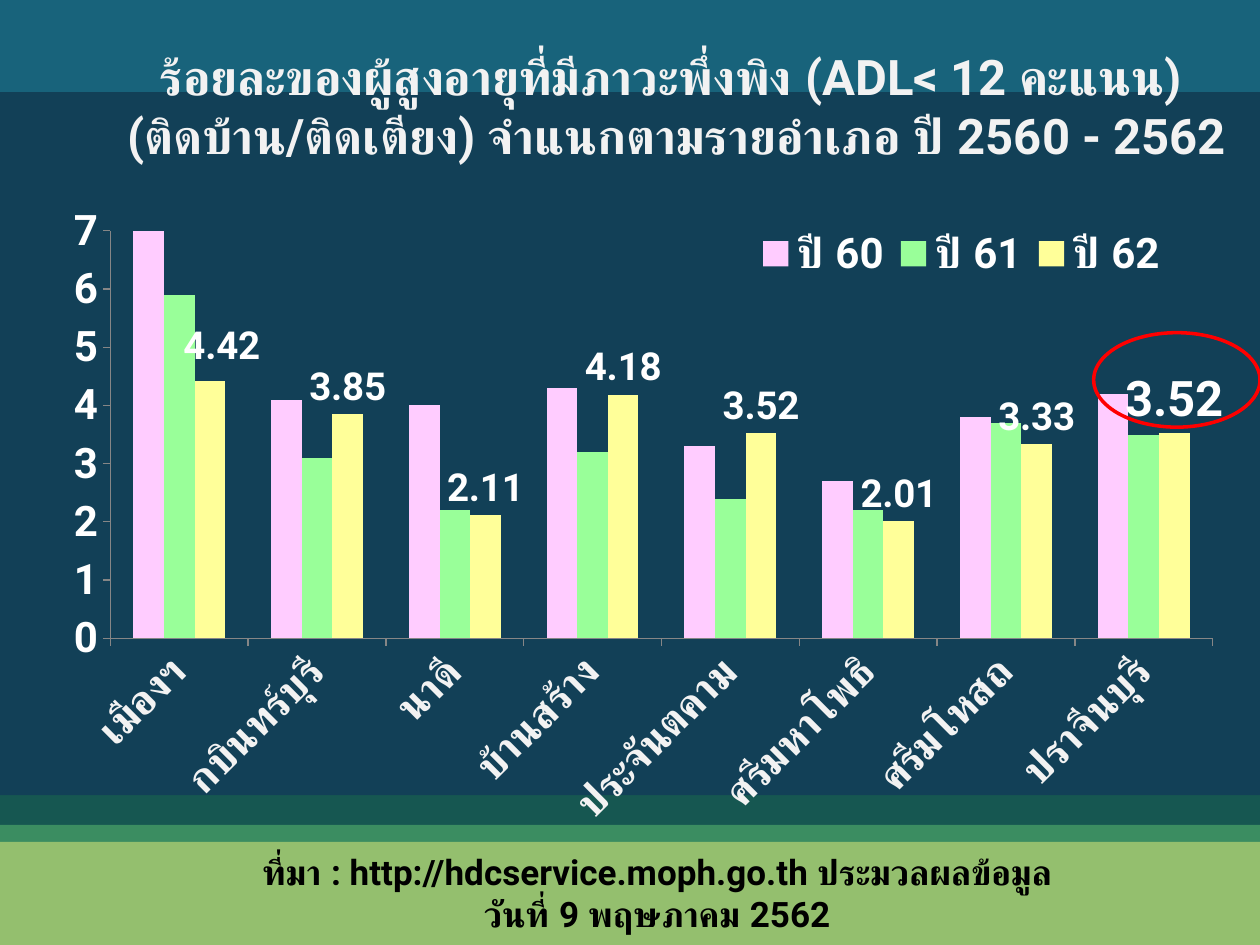
from pptx import Presentation
from pptx.chart.data import CategoryChartData
from pptx.dml.color import RGBColor
from pptx.enum.chart import XL_CHART_TYPE, XL_LABEL_POSITION, XL_LEGEND_POSITION, XL_TICK_MARK
from pptx.enum.shapes import MSO_SHAPE
from pptx.enum.text import MSO_ANCHOR, PP_ALIGN
from pptx.oxml import parse_xml
from pptx.oxml.ns import nsdecls, qn
from pptx.util import Inches, Pt

COLUMN = XL_CHART_TYPE.COLUMN_CLUSTERED
OUTSIDE = XL_LABEL_POSITION.OUTSIDE_END
RIGHT = XL_LEGEND_POSITION.RIGHT
TICK = XL_TICK_MARK.OUTSIDE
NO_TICK = XL_TICK_MARK.NONE
RECT, OVAL = MSO_SHAPE.RECTANGLE, MSO_SHAPE.OVAL
TOP, MIDDLE = MSO_ANCHOR.TOP, MSO_ANCHOR.MIDDLE
CENTER = PP_ALIGN.CENTER

TEAL = RGBColor(0x18, 0x63, 0x7B)
NAVY = RGBColor(0x12, 0x40, 0x57)
PINE = RGBColor(0x16, 0x57, 0x51)
GREEN = RGBColor(0x3B, 0x8D, 0x61)
LIME = RGBColor(0x94, 0xBF, 0x6E)
PINK = RGBColor(0xFF, 0xCC, 0xFF)
MINT = RGBColor(0x99, 0xFF, 0x99)
CREAM = RGBColor(0xFF, 0xFF, 0x99)
RED = RGBColor(0xFF, 0, 0)
GRAY = RGBColor(0x86, 0x86, 0x86)
PALE = RGBColor(0xF2, 0xF2, 0xF2)
WHITE = RGBColor(0xFF, 0xFF, 0xFF)
BLACK = RGBColor(0, 0, 0)

# Bands as (top, height, colour), in percent of the slide
BANDS = [
    (83.5, 4.6, PINE),
    (0, 10.2, TEAL),
    (9.75, 74.4, NAVY),
    (87.3, 2.3, GREEN),
    (89.1, 10.9, LIME),
]
TITLE = [
    "ร้อยละของผู้สูงอายุที่มีภาวะพึ่งพิง (ADL< 12 คะแนน) ",
    "(ติดบ้าน/ติดเตียง) จำแนกตามรายอำเภอ ปี 2560 - 2562",
]
SOURCE = ["ที่มา : http://hdcservice.moph.go.th ประมวลผลข้อมูล วันที่ 9 พฤษภาคม 2562"]
TOWNS = ["เมืองฯ", "กบินทร์บุรี", "นาดี", "บ้านสร้าง",
         "ประจันตคาม", "ศรีมหาโพธิ", "ศรีมโหสถ", "ปราจีนบุรี"]
YEARS = [
    ("ปี 60", PINK, [7, 4.1, 4, 4.3, 3.3, 2.7, 3.8, 4.2]),
    ("ปี 61", MINT, [5.9, 3.1, 2.2, 3.2, 2.4, 2.2, 3.7, 3.5]),
    ("ปี 62", CREAM, [4.42, 3.85, 2.11, 4.18, 3.52, 2.01, 3.33, 3.52]),
]


class Deck:
    """Style and current slide; lengths are percent of the slide's size."""

    face = "Roboto"

    def __init__(self, wide, high):
        self.prs = Presentation()
        self.prs.slide_width, self.prs.slide_height = Inches(wide), Inches(high)
        self.slide = self.prs.slides.add_slide(self.prs.slide_layouts[6])

    def box(self, x, y, w, h):
        wide, high = self.prs.slide_width, self.prs.slide_height
        return [int(n * side / 100) for n, side in zip((x, y, w, h), (wide, high) * 2)]

    def style(self, font, size, color):
        font.size, font.bold, font.name = Pt(size), True, self.face
        font.color.rgb = color

    def shape(self, kind, area, fill=None, line=None):
        item = self.slide.shapes.add_shape(kind, *self.box(*area))
        item.shadow.inherit = False
        if fill is None:
            item.fill.background()
        else:
            item.fill.solid()
            item.fill.fore_color.rgb = fill
        if line is None:
            item.line.fill.background()
        else:
            item.line.color.rgb, item.line.width = line, Pt(2)

    def text(self, area, lines, size, color, anchor=TOP):
        frame = self.slide.shapes.add_textbox(*self.box(*area)).text_frame
        frame.word_wrap, frame.vertical_anchor = True, anchor
        frame.text = "\n".join(lines)
        for para in frame.paragraphs:
            para.alignment = CENTER
            for run in para.runs:
                self.style(run.font, size, color)

    def layout(self, x, y, w=None, h=None, inner=False):
        tags = '<c:layoutTarget val="inner"/>' if inner else ""
        if w:
            tags += '<c:xMode val="edge"/><c:yMode val="edge"/>'
        for tag, size in zip("xywh", (x, y, w, h)):
            if size is not None:
                tags += f'<c:{tag} val="{size}"/>'
        return parse_xml(f'<c:layout {nsdecls("c")}><c:manualLayout>{tags}'
                         "</c:manualLayout></c:layout>")

    def axis(self, axis, color):
        axis.has_major_gridlines = False
        axis.major_tick_mark, axis.minor_tick_mark = TICK, NO_TICK
        axis.format.line.color.rgb = GRAY
        self.style(axis.tick_labels.font, 24, color)

    def chart(self, area, cats, rows):
        data = CategoryChartData()
        data.categories = cats
        for name, _, vals in rows:
            data.add_series(name, vals)
        chart = self.slide.shapes.add_chart(COLUMN, *self.box(*area), data).chart
        chart.has_title = False
        chart.font.size, chart.font.name = Pt(18), "Calibri"
        plot = chart.plots[0]
        plot.gap_width, plot.overlap, plot.vary_by_categories = 150, 0, False
        for series, (_, color, _) in zip(plot.series, rows):
            series.invert_if_negative = False
            series.format.fill.solid()
            series.format.fill.fore_color.rgb = color

        # Axes, with slanted town names
        self.axis(chart.category_axis, PALE)
        self.axis(chart.value_axis, WHITE)
        scale = chart.value_axis
        scale.minimum_scale, scale.maximum_scale, scale.major_unit = 0, 7, 1
        scale.tick_labels.number_format = "General"
        scale.tick_labels.number_format_is_linked = False
        body = chart.category_axis._element.find(qn("c:txPr")).find(qn("a:bodyPr"))
        body.set("rot", "-2700000")
        body.set("vert", "horz")

        # Legend and plot area
        chart.has_legend = True
        legend = chart.legend
        legend.position, legend.include_in_layout = RIGHT, False
        self.style(legend.font, 24, WHITE)
        legend._element.find(qn("c:legendPos")).addnext(self.layout(0.6, 0.11, 0.36, 0.09))
        field = chart._chartSpace.chart.plotArea
        for old in field.findall(qn("c:layout")):
            field.remove(old)
        field.insert(0, self.layout(0.069, 0.123, 0.921, 0.568, inner=True))
        return chart

    def labels(self, series, size, color):
        marks = series.data_labels
        marks.show_value, marks.position = True, OUTSIDE
        marks.number_format, marks.number_format_is_linked = "0.00", False
        self.style(marks.font, size, color)

    def mark(self, series, index, size, color, shift=None):
        label = series.points[index].data_label
        self.style(label.font, size, color)
        label.position = OUTSIDE
        if shift:
            label._dLbl.find(qn("c:idx")).addnext(self.layout(*shift))


def main():
    deck = Deck(10, 7.5)

    # Background bands
    for top, high, color in BANDS:
        deck.shape(RECT, (0, top, 100, high), color)

    # Chart: values shown for the latest year only
    chart = deck.chart((2.2, 15.1, 95, 75.9), TOWNS, YEARS)
    latest = chart.plots[0].series[2]
    deck.labels(latest, 22, WHITE)
    deck.mark(latest, 0, 22, WHITE, shift=(0.01, -0.01))
    deck.mark(latest, 7, 28, WHITE)

    # Title, ring round the province and source
    deck.text((8.7, 0, 90, 22.3), TITLE, 28, PALE, MIDDLE)
    deck.shape(OVAL, (86.8, 35.2, 13.2, 10), line=RED)
    deck.text((18.5, 89.3, 67.3, 5.9), SOURCE, 20, BLACK)

    deck.prs.save("out.pptx")


if __name__ == "__main__":
    main()
